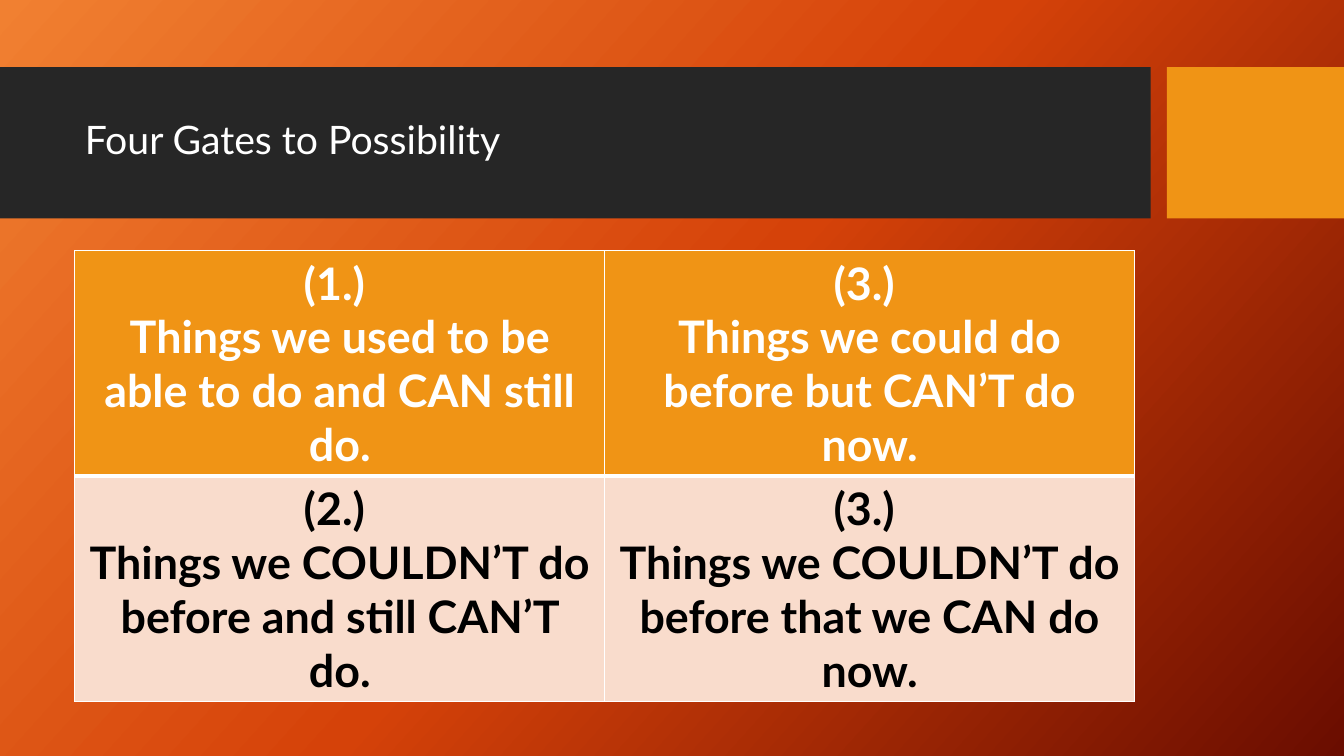
from copy import deepcopy

from lxml.etree import SubElement
from pptx import Presentation
from pptx.dml.color import RGBColor
from pptx.enum.shapes import MSO_SHAPE
from pptx.enum.text import MSO_ANCHOR, PP_ALIGN
from pptx.oxml.ns import qn
from pptx.util import Pt

COLORS = {
    "glow": "F18031",
    "flame": "D54209",
    "ember": "6A0D00",
    "band": "262626",
    "accent": "F09415",
    "tint": "F9DCCC",
    "white": "FFFFFF",
    "black": "000000",
}
GATES = [
    [
        ("(1.) ", "Things we used to be able to do and CAN still do."),
        ("(3.) ", "Things we could do before but CAN’T do now."),
    ],
    [
        ("(2.) ", "Things we COULDN’T do before and still CAN’T do."),
        ("(3.) ", "Things we COULDN’T do before that we CAN do now."),
    ],
]
ROW_STYLES = [
    {"fill": "accent", "color": "white", "borders": {"L": 1, "R": 1, "T": 1, "B": 3}},
    {"fill": "tint", "color": "black", "borders": {"L": 1, "R": 1, "T": 3, "B": 1}},
]


def rgb(name):
    return RGBColor.from_string(COLORS[name])


def write_text(frame, *lines, size, color, bold=False, align=PP_ALIGN.LEFT, spacing=None):
    """Write one paragraph per line, all in the same format."""
    frame.word_wrap = True
    for index, line in enumerate(lines):
        paragraph = frame.paragraphs[0] if index == 0 else frame.add_paragraph()
        paragraph.alignment = align
        paragraph.line_spacing = spacing
        run = paragraph.add_run()
        run.text = line
        run.font.name = "Lato"
        run.font.size = Pt(size)
        run.font.bold = bold
        run.font.color.rgb = rgb(color)


class SlideBuilder:
    def __init__(self, slide):
        self.slide = slide

    def background(self, colors, clockwise_angle):
        """Fill the slide with a gradient of evenly spaced colours."""
        fill = self.slide.background.fill
        fill.gradient()
        fill.gradient_angle = 360 - clockwise_angle
        first = fill.gradient_stops[0]._gs
        stop_list = first.getparent()
        while len(stop_list) < len(colors):
            stop_list.append(deepcopy(first))
        for index, (stop, color) in enumerate(zip(fill.gradient_stops, colors)):
            stop.position = index / (len(colors) - 1)
            stop.color.rgb = rgb(color)

    def rectangle(self, left, top, width, height, color):
        shape = self.slide.shapes.add_shape(
            MSO_SHAPE.RECTANGLE, Pt(left), Pt(top), Pt(width), Pt(height)
        )
        shape.shadow.inherit = False
        shape.fill.solid()
        shape.fill.fore_color.rgb = rgb(color)
        shape.line.fill.background()

    def title(self, left, top, width, height, text):
        box = self.slide.shapes.add_textbox(Pt(left), Pt(top), Pt(width), Pt(height))
        box.text_frame.vertical_anchor = MSO_ANCHOR.MIDDLE
        write_text(box.text_frame, text, size=28, color="white", spacing=0.9)

    def table(self, left, top, width, height, rows, row_styles):
        table = self.slide.shapes.add_table(
            len(rows), len(rows[0]), Pt(left), Pt(top), Pt(width), Pt(height)
        ).table
        table.first_row = table.horz_banding = False
        for row_index, (row, style) in enumerate(zip(rows, row_styles)):
            for column_index, lines in enumerate(row):
                cell = table.cell(row_index, column_index)
                self.borders(cell, style["borders"])
                cell.fill.solid()
                cell.fill.fore_color.rgb = rgb(style["fill"])
                write_text(cell.text_frame, *lines, size=32, color=style["color"],
                           bold=True, align=PP_ALIGN.CENTER)

    def borders(self, cell, widths):
        properties = cell._tc.get_or_add_tcPr()
        for side, width in widths.items():
            line = SubElement(properties, qn(f"a:ln{side}"), w=str(Pt(width)))
            fill = SubElement(line, qn("a:solidFill"))
            SubElement(fill, qn("a:srgbClr"), val=COLORS["white"])


def main():
    presentation = Presentation()
    presentation.slide_width = Pt(960)
    presentation.slide_height = Pt(540)
    builder = SlideBuilder(presentation.slides.add_slide(presentation.slide_layouts[6]))
    builder.background(["glow", "flame", "ember"], 42)
    builder.rectangle(0, 48, 822, 108, "band")
    builder.rectangle(833.5, 48, 126.5, 108, "accent")
    builder.title(53.5, 59, 757, 85, "Four Gates to Possibility")
    builder.table(53.5, 179, 757, 322, GATES, ROW_STYLES)
    presentation.save("out.pptx")


if __name__ == "__main__":
    main()
